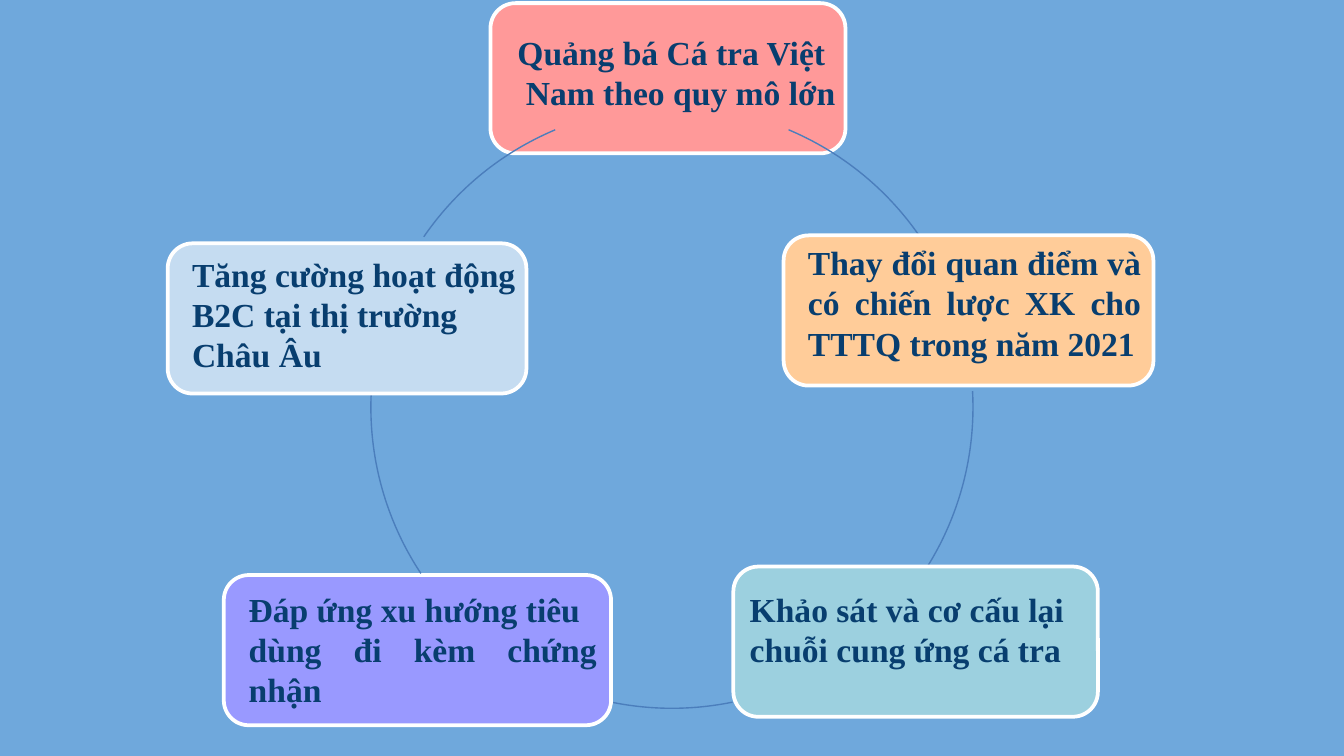
from dataclasses import dataclass

import pptx
import pptx.dml.color
import pptx.enum.shapes
import pptx.enum.text
import pptx.slide
import pptx.util
from pptx.dml.color import RGBColor
from pptx.util import Cm

BACKGROUND = RGBColor(0x6F, 0xA8, 0xDC)
WHITE = RGBColor(0xFF, 0xFF, 0xFF)
NAVY = RGBColor(0x08, 0x3E, 0x6F)
RING_BLUE = RGBColor(0x4B, 0x7E, 0xBC)
PINK = RGBColor(0xFF, 0x99, 0x99)
ORANGE = RGBColor(0xFF, 0xCC, 0x99)
TEAL = RGBColor(0x9C, 0xD0, 0xDF)
VIOLET = RGBColor(0x99, 0x99, 0xFF)
PALE_BLUE = RGBColor(0xC5, 0xDC, 0xF1)

CARD_HEIGHT = 2.84
RING_LEFT, RING_TOP, RING_SIZE = 7.01, 2.01, 11.38
ADJUSTMENT_PER_DEGREE = 0.6


@dataclass(frozen=True)
class Card:
    left: float
    top: float
    width: float
    fill: RGBColor
    arc_start: float
    arc_end: float


@dataclass(frozen=True)
class Label:
    left: float
    top: float
    width: float
    height: float
    lines: tuple[str, ...]
    justified: bool = True
    wrapped: bool = True


CARDS = (
    Card(9.27, 0.06, 6.71, PINK, 292.8, 325.5),
    Card(14.81, 4.45, 6.99, ORANGE, 356.9, 33.5),
    Card(13.86, 10.71, 6.89, TEAL, 78.4, 101.6),
    Card(4.23, 10.87, 7.32, VIOLET, 146.5, 183.1),
    Card(3.17, 4.6, 6.78, PALE_BLUE, 214.5, 247.2),
)

LABELS = (
    Label(8.89, 0.48, 7.24, 1.8,
          ("Quảng bá Cá tra Việt", " Nam theo quy mô lớn"), wrapped=False),
    Label(14.38, 4.45, 7.44, 2.57,
          ("Thay đổi quan điểm và có chiến lược XK cho TTTQ trong năm 2021",)),
    Label(13.92, 11.0, 6.83, 1.8,
          ("Khảo sát và cơ cấu lại chuỗi cung ứng cá tra",), justified=False),
    Label(3.81, 11.0, 7.72, 2.57,
          ("Đáp ứng xu hướng tiêu", "dùng đi kèm chứng nhận")),
    Label(2.74, 4.67, 8.26, 2.57,
          ("Tăng cường hoạt động", "B2C tại thị trường", "Châu Âu")),
)


def draw_card(slide: pptx.slide.Slide, card: Card) -> None:
    shape = slide.shapes.add_shape(
        pptx.enum.shapes.MSO_SHAPE.ROUNDED_RECTANGLE,
        Cm(card.left), Cm(card.top), Cm(card.width), Cm(CARD_HEIGHT))
    shape.shadow.inherit = False
    shape.fill.solid()
    shape.fill.fore_color.rgb = card.fill
    shape.line.color.rgb = WHITE
    shape.line.width = pptx.util.Pt(2)


def draw_arc(slide: pptx.slide.Slide, start: float, end: float) -> None:
    arc = slide.shapes.add_shape(
        pptx.enum.shapes.MSO_SHAPE.ARC,
        Cm(RING_LEFT), Cm(RING_TOP), Cm(RING_SIZE), Cm(RING_SIZE))
    arc.adjustments[0] = start * ADJUSTMENT_PER_DEGREE
    arc.adjustments[1] = end * ADJUSTMENT_PER_DEGREE
    arc.shadow.inherit = False
    arc.fill.background()
    arc.line.color.rgb = RING_BLUE
    arc.line.width = pptx.util.Pt(0.75)


def draw_label(slide: pptx.slide.Slide, label: Label) -> None:
    text_box = slide.shapes.add_textbox(
        Cm(label.left), Cm(label.top), Cm(label.width), Cm(label.height))
    frame = text_box.text_frame
    frame.word_wrap = label.wrapped
    frame.auto_size = pptx.enum.text.MSO_AUTO_SIZE.SHAPE_TO_FIT_TEXT
    frame.text = "\n".join(label.lines)
    for paragraph in frame.paragraphs:
        paragraph.font.name = "Times New Roman"
        paragraph.font.size = pptx.util.Pt(18)
        paragraph.font.bold = True
        paragraph.font.color.rgb = NAVY
        if label.justified:
            paragraph.alignment = pptx.enum.text.PP_ALIGN.JUSTIFY
            paragraph._p.get_or_add_pPr().set("marL", str(Cm(0.64)))


def main() -> None:
    presentation = pptx.Presentation()
    presentation.slide_width = Cm(25.4)
    presentation.slide_height = Cm(14.29)
    slide = presentation.slides.add_slide(presentation.slide_layouts[6])
    slide.background.fill.solid()
    slide.background.fill.fore_color.rgb = BACKGROUND
    for card in CARDS:
        draw_card(slide, card)
        draw_arc(slide, card.arc_start, card.arc_end)
    for label in LABELS:
        draw_label(slide, label)
    presentation.save("out.pptx")


if __name__ == "__main__":
    main()
